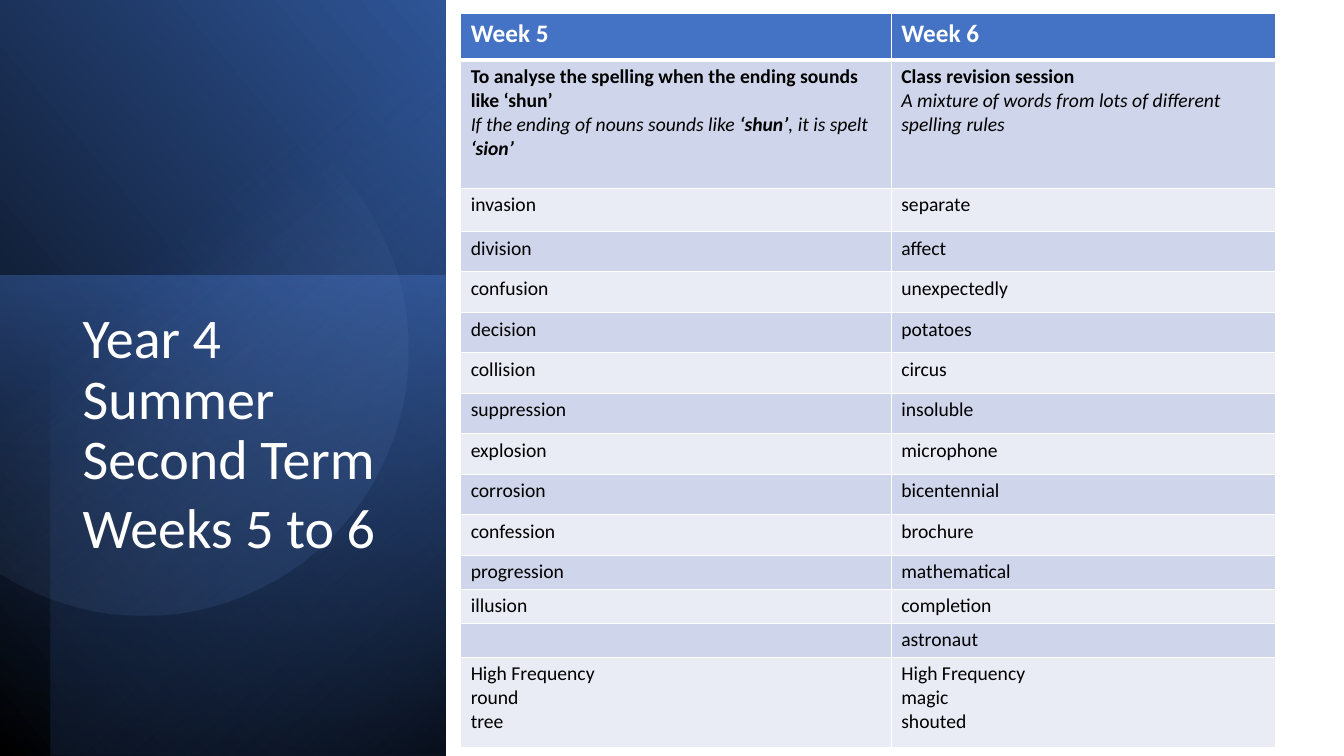
from dataclasses import dataclass

from lxml.etree import SubElement
from pptx import Presentation
from pptx.dml.color import RGBColor
from pptx.enum.shapes import MSO_SHAPE
from pptx.enum.text import MSO_ANCHOR, MSO_AUTO_SIZE, PP_ALIGN
from pptx.oxml.ns import qn
from pptx.util import Cm, Pt

# Content: table text is a list of paragraphs, each a list of (text, style) runs
TITLE = ["Year 4 Summer Second Term", "Weeks 5 to 6"]
WEEKS = ["Week 5", "Week 6"]
RULES = [
    [
        [("To analyse the spelling when the ending sounds like ‘shun’", "b")],
        [("If the ending of nouns sounds like ", "i"), ("‘shun’", "bi"),
         (", it is spelt ", "i"), ("‘sion’", "bi")],
    ],
    [
        [("Class revision session", "b")],
        [("A mixture of words from lots of different spelling rules", "i")],
    ],
]
WORDS = [
    ("invasion", "separate"),
    ("division", "affect"),
    ("confusion", "unexpectedly"),
    ("decision", "potatoes"),
    ("collision", "circus"),
    ("suppression", "insoluble"),
    ("explosion", "microphone"),
    ("corrosion", "bicentennial"),
    ("confession", "brochure"),
    ("progression", "mathematical"),
    ("illusion", "completion"),
    ("", "astronaut"),
]
HIGH_FREQUENCY = [
    ["High Frequency", "round", "tree"],
    ["High Frequency", "magic", "shouted"],
]


@dataclass(frozen=True)
class Theme:
    font: str = "Calibri"
    title_size: int = 40
    header_size: int = 18
    body_size: int = 14
    white: str = "FFFFFF"
    black: str = "000000"
    blue: str = "4472C4"
    deep_blue: str = "2F5597"
    navy: str = "203864"
    pale_blue: str = "8FAADC"
    bands: tuple = ("CFD5EA", "E9EBF5")


theme = Theme()

# Layout in centimetres
SLIDE_SIZE = (33.87, 19.05)
TITLE_BOX = (1.83, 7.7, 8, 8.53)
TABLE_ORIGIN = (11.61, 0.33)
COLUMN_WIDTHS = (10.85, 9.68)
ROW_HEIGHTS = [1.18, 3.23, 1.09] + [1.02] * 8 + [0.85] * 3 + [2.28]

# Panels: visible box, rotation, flipped, gradient angle, stops (position, colour, opacity)
PANELS = [
    ((0, 0, 11.23, 19.05), 90, True, 310,
     [(0, theme.black, 100), (100, theme.deep_blue, 100)]),
    ((0, 6.95, 11.23, 12.1), 270, False, 190,
     [(0, theme.blue, 50), (100, theme.navy, 0)]),
    ((1.27, 0, 9.96, 19.05), 270, True, 220,
     [(0, theme.black, 59), (69, theme.blue, 0)]),
]

# Cut-off circle: start point, then lines (one point) and Bézier curves (three points)
CIRCLE_START = (3.63, 2.13)
CIRCLE_SEGMENTS = [
    [(4.06, 2.13), (4.52, 2.18), (4.98, 2.26)],
    [(8.59, 3.02), (10.9, 6.55), (10.16, 10.16)],
    [(9.42, 13.77), (5.89, 16.1), (2.29, 15.37)],
    [(1.6, 15.21), (0.97, 14.99), (0.38, 14.66)],
    [(0, 14.43)],
    [(0, 3.2)],
    [(0.51, 2.92)],
    [(1.45, 2.41), (2.51, 2.13), (3.63, 2.13)],
]
CIRCLE_STOPS = [(39, theme.pale_blue, 0), (100, theme.deep_blue, 26)]
CURVE_STEPS = 24


def style_run(run, size, colour, style=""):
    run.font.name = theme.font
    run.font.size = Pt(size)
    run.font.color.rgb = RGBColor.from_string(colour)
    run.font.bold = "b" in style
    run.font.italic = "i" in style


def fill_gradient(shape, angle, stops):
    shape.shadow.inherit = False
    shape.line.fill.background()
    shape.fill.gradient()
    shape.fill.gradient_angle = (360 - angle) % 360
    stop_list = shape.fill.gradient_stops._gsLst
    for stop in list(stop_list):
        stop_list.remove(stop)
    for position, colour, opacity in stops:
        stop = SubElement(stop_list, qn("a:gs"), pos=str(position * 1000))
        tint = SubElement(stop, qn("a:srgbClr"), val=colour)
        SubElement(tint, qn("a:alpha"), val=str(opacity * 1000))


def add_panel(slide, box, rotation, flipped, angle, stops):
    left, top, width, height = box
    # A quarter turn swaps width and height around the centre
    shift = (width - height) / 2
    frame = (left + shift, top - shift, height, width)
    panel = slide.shapes.add_shape(MSO_SHAPE.RECTANGLE, *map(Cm, frame))
    panel.rotation = rotation
    if flipped:
        panel._element.spPr.xfrm.set("flipH", "1")
    fill_gradient(panel, angle, stops)


def add_circle(slide):
    points = [CIRCLE_START]
    for segment in CIRCLE_SEGMENTS:
        if len(segment) == 1:
            points += segment
            continue
        corners = [points[-1]] + segment
        for step in range(1, CURVE_STEPS + 1):
            t = step / CURVE_STEPS
            weights = ((1 - t) ** 3, 3 * t * (1 - t) ** 2, 3 * t * t * (1 - t), t ** 3)
            points.append(tuple(sum(weight * corner[axis] for weight, corner
                                    in zip(weights, corners)) for axis in (0, 1)))
    outline = [(Cm(x), Cm(y)) for x, y in points]
    builder = slide.shapes.build_freeform(*outline[0])
    builder.add_line_segments(outline[1:], close=True)
    fill_gradient(builder.convert_to_shape(), 52, CIRCLE_STOPS)


def add_title(slide):
    title = slide.shapes.title
    title.left, title.top, title.width, title.height = map(Cm, TITLE_BOX)
    frame = title.text_frame
    frame.text = "\n".join(TITLE)
    frame.word_wrap = True
    frame.auto_size = MSO_AUTO_SIZE.NONE
    frame.vertical_anchor = MSO_ANCHOR.TOP
    for paragraph in frame.paragraphs:
        paragraph.alignment = PP_ALIGN.LEFT
        paragraph.line_spacing = 0.9
        paragraph.space_before = Pt(0)
        paragraph.space_after = Pt(6)
        style_run(paragraph.runs[0], theme.title_size, theme.white)
    # Bring the title in front of the panels
    slide.shapes._spTree.append(title._element)


def fill_cell(cell, paragraphs, size, text_colour, fill_colour, bottom_width):
    for side, width in (("L", 1), ("R", 1), ("T", 1), ("B", bottom_width)):
        border = SubElement(cell._tc.get_or_add_tcPr(), qn(f"a:ln{side}"), w=str(Pt(width)))
        SubElement(SubElement(border, qn("a:solidFill")), qn("a:srgbClr"), val=theme.white)
    cell.fill.solid()
    cell.fill.fore_color.rgb = RGBColor.from_string(fill_colour)
    frame = cell.text_frame
    for index, runs in enumerate(paragraphs):
        paragraph = frame.add_paragraph() if index else frame.paragraphs[0]
        for text, style in runs:
            run = paragraph.add_run()
            run.text = text
            style_run(run, size, text_colour, style)
    if not cell.text:
        # Keeps the empty cell as low as its neighbour
        SubElement(frame.paragraphs[0]._p, qn("a:endParaRPr"), sz=str(size * 100))


def add_spelling_table(slide):
    rows = [[[[(week, "b")]] for week in WEEKS], RULES]
    rows += [[[[(word, "")]] if word else [] for word in pair] for pair in WORDS]
    rows.append([[[(line, "")] for line in lines] for lines in HIGH_FREQUENCY])
    size = (sum(COLUMN_WIDTHS), sum(ROW_HEIGHTS))
    table = slide.shapes.add_table(len(rows), len(WEEKS), *map(Cm, TABLE_ORIGIN + size)).table
    for column, width in zip(table.columns, COLUMN_WIDTHS):
        column.width = Cm(width)
    for index, (cells, height) in enumerate(zip(rows, ROW_HEIGHTS)):
        table.rows[index].height = Cm(height)
        if index == 0:
            look = (theme.header_size, theme.white, theme.blue, 3)
        else:
            look = (theme.body_size, theme.black, theme.bands[(index - 1) % 2], 1)
        for column, paragraphs in enumerate(cells):
            fill_cell(table.cell(index, column), paragraphs, *look)


def main():
    presentation = Presentation()
    presentation.slide_width, presentation.slide_height = map(Cm, SLIDE_SIZE)
    slide = presentation.slides.add_slide(presentation.slide_layouts[5])
    for panel in PANELS:
        add_panel(slide, *panel)
    add_circle(slide)
    add_title(slide)
    add_spelling_table(slide)
    presentation.save("out.pptx")


if __name__ == "__main__":
    main()
